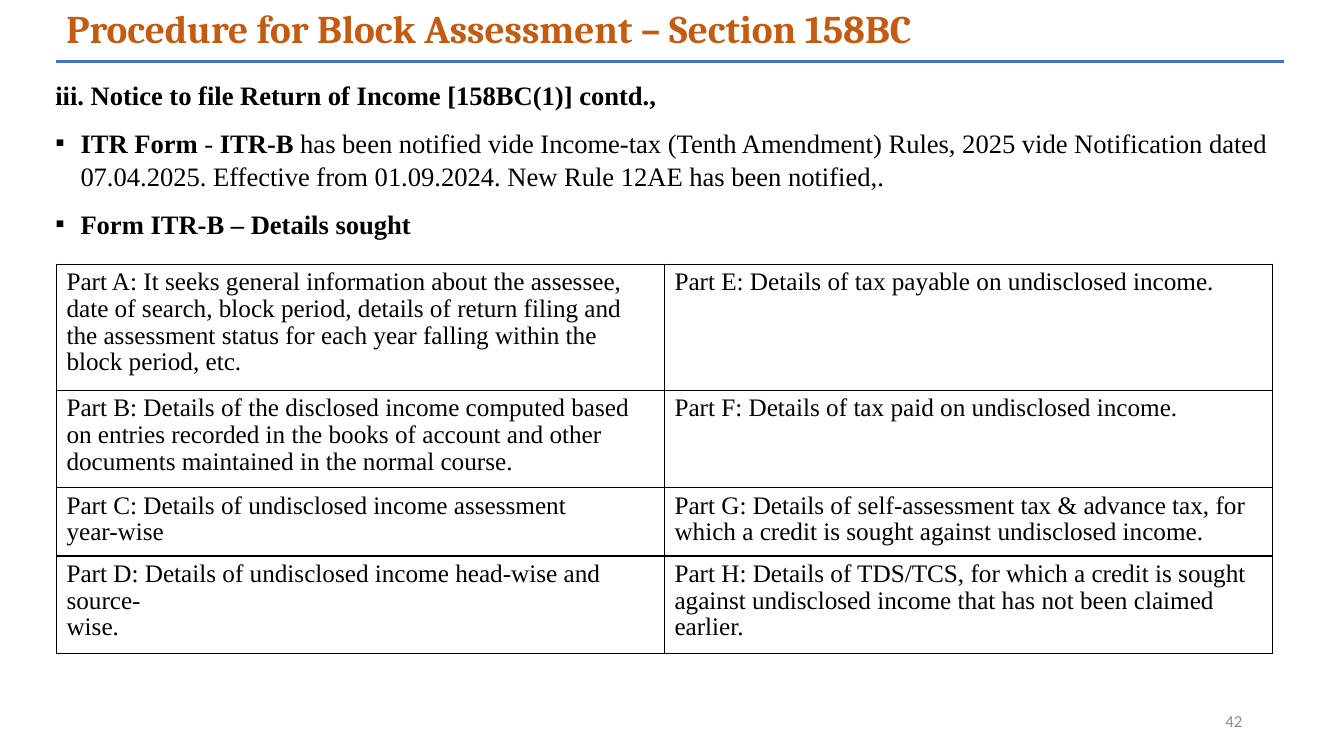
from lxml.etree import SubElement
from pptx import Presentation
from pptx.dml.color import RGBColor
from pptx.enum.shapes import MSO_CONNECTOR as Conn
from pptx.enum.text import MSO_ANCHOR as Anchor, PP_ALIGN as Align
from pptx.oxml.ns import qn
from pptx.util import Pt

PX = 9144  # 100 px to the inch
SERIF = "Times New Roman"


def color(code):
    return RGBColor.from_string(code)


def add_run(para, text, size, font=SERIF, code="000000", bold=False):
    run = para.add_run()
    run.text = text
    run.font.size = Pt(size)
    run.font.name = font
    run.font.bold = bold
    run.font.color.rgb = color(code)


deck = Presentation()
deck.slide_width, deck.slide_height = 1333 * PX, 750 * PX
slide = deck.slides.add_slide(deck.slide_layouts[6])
shapes = slide.shapes

# Title, body and page number boxes
frames = []
for box, anchor in [
    ((56, 12, 1077, 37), Anchor.MIDDLE),
    ((45, 72, 1238, 180), Anchor.TOP),
    ((942, 695, 300, 40), Anchor.MIDDLE),
]:
    frame = shapes.add_textbox(*[n * PX for n in box]).text_frame
    frame.word_wrap = True
    frame.vertical_anchor = anchor
    frames.append(frame)
title, body, page = frames

para = title.paragraphs[0]
para.line_spacing = 0.9
add_run(para, "Procedure for Block Assessment – Section 158BC", 28, "Cambria", "C55A11", True)

para = page.paragraphs[0]
para.alignment = Align.RIGHT
add_run(para, "42", 12, "Calibri", "8C8C8C")

# Rule under the title
rule = shapes.add_connector(Conn.STRAIGHT, 56 * PX, 61 * PX, 1273 * PX, 61 * PX)
rule.line.color.rgb = color("4472C4")
rule.line.width = Pt(1.5)
SubElement(rule._element.spPr, qn("a:effectLst"))

# Heading and bullets: each run is (text, bold)
points = [
    [("iii. Notice to file Return of Income [158BC(1)] contd.,", True)],
    [
        ("ITR Form", True),
        (" - ", False),
        ("ITR-B", True),
        (" has been notified vide Income-tax (Tenth Amendment) Rules, 2025 vide "
         "Notification dated 07.04.2025. Effective from 01.09.2024. "
         "New Rule 12AE has been notified,.", False),
    ],
    [("Form ITR-B – Details sought", True)],
]
for i, runs in enumerate(points):
    para = body.add_paragraph() if i else body.paragraphs[0]
    para.space_before = Pt(10)
    para.line_spacing = 1.05
    for text, bold in runs:
        add_run(para, text, 19, bold=bold)
    if i:
        props = para._p.get_or_add_pPr()
        props.set("marL", str(25 * PX))
        props.set("indent", str(-25 * PX))
        SubElement(props, qn("a:buFont"), typeface=SERIF)
        SubElement(props, qn("a:buChar"), char="▪")

# Table of the parts of the form
parts = [
    ("Part A: It seeks general information about the assessee,\n"
     "date of search, block period, details of return filing and the assessment "
     "status for each year falling within the block period, etc.",
     "Part E: Details of tax payable on undisclosed income."),
    ("Part B: Details of the disclosed income computed based on entries recorded in "
     "the books of account and other documents maintained in the normal course.",
     "Part F: Details of tax paid on undisclosed income."),
    ("Part C: Details of undisclosed income assessment\nyear-wise",
     "Part G: Details of self-assessment tax & advance tax, for which a credit is "
     "sought against undisclosed income."),
    ("Part D: Details of undisclosed income head-wise and source-\nwise.",
     "Part H: Details of TDS/TCS, for which a credit is sought against undisclosed "
     "income that has not been claimed earlier."),
]
highs = [121, 93, 65, 93]
table = shapes.add_table(4, 2, 56 * PX, 262 * PX, 1206 * PX, sum(highs) * PX).table
table.first_row = table.horz_banding = False
for col in table.columns:
    col.width = 603 * PX

for row, high, texts in zip(table.rows, highs, parts):
    row.height = high * PX
    for cell, text in zip(row.cells, texts):
        para = cell.text_frame.paragraphs[0]
        para.line_spacing = 0.96
        for i, line in enumerate(text.split("\n")):
            if i:
                para.add_line_break()
            add_run(para, line, 18)
        # Borders come before the fill in the cell properties
        props = cell._tc.get_or_add_tcPr()
        for side in ("lnL", "lnR", "lnT", "lnB"):
            edge = SubElement(props, qn("a:" + side), w=str(Pt(1)))
            fill = SubElement(edge, qn("a:solidFill"))
            SubElement(fill, qn("a:srgbClr"), val="000000")
        cell.fill.background()

deck.save("out.pptx")
